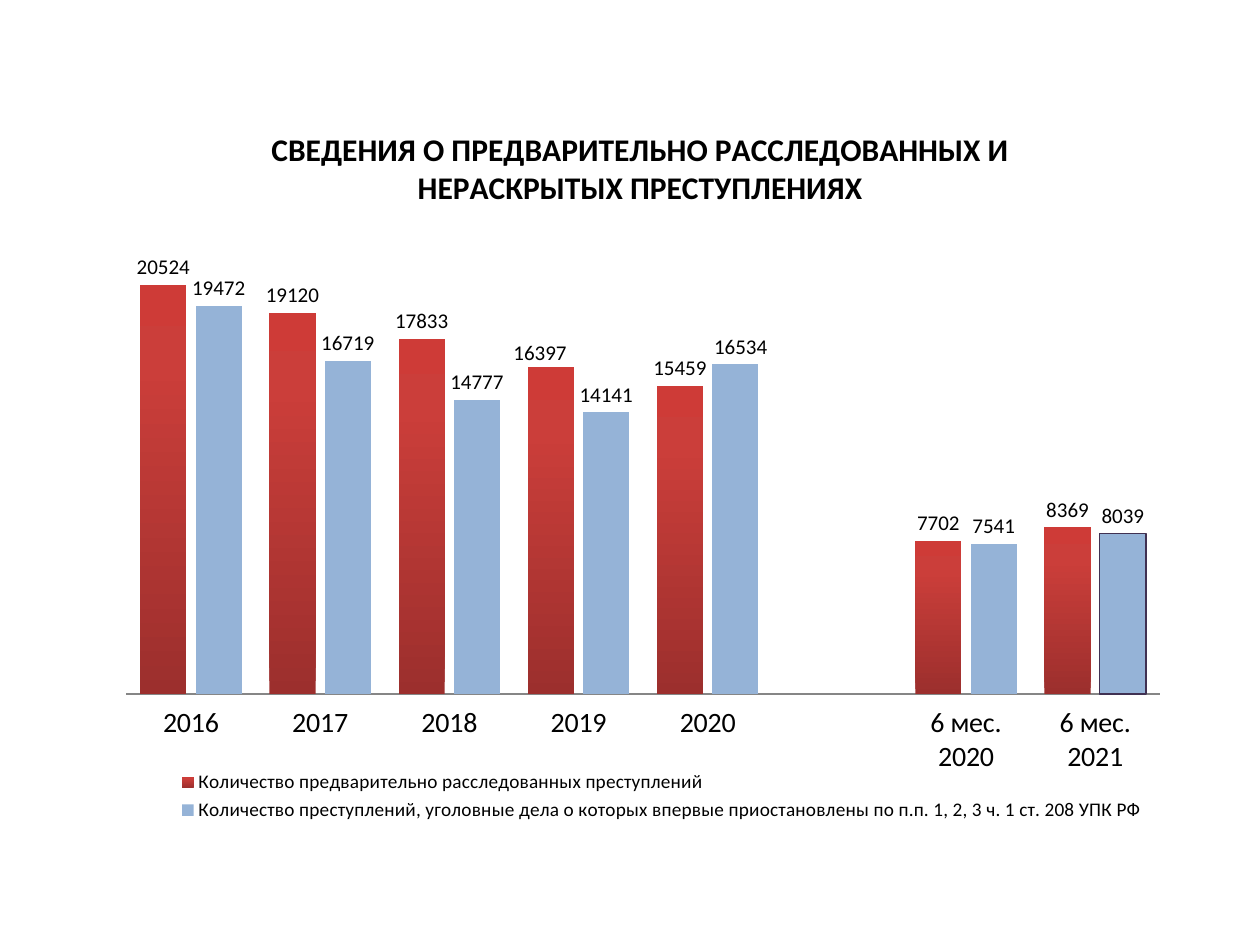
from copy import deepcopy
from dataclasses import dataclass

from lxml.etree import SubElement
from pptx import Presentation
from pptx.chart.data import CategoryChartData as Data
from pptx.dml.color import RGBColor as RGB
from pptx.enum.chart import XL_CHART_TYPE as Kind
from pptx.enum.chart import XL_LABEL_POSITION as Spot
from pptx.enum.chart import XL_LEGEND_POSITION as Side
from pptx.enum.chart import XL_TICK_LABEL_POSITION as Tick
from pptx.enum.chart import XL_TICK_MARK as Mark
from pptx.oxml.ns import qn
from pptx.util import Emu, Pt

SCALE = 914400 / 126


def px(n):
    return Emu(round(n * SCALE))


@dataclass(frozen=True)
class Theme:
    font: str = "Calibri"
    ink: str = "000000"
    axis: str = "868686"
    blue: str = "95B3D7"
    edge: str = "403152"
    reds: tuple = ((0, "9C2F2D"), (0.8, "CB3E3A"), (1, "CE3B37"))
    head: int = 18
    tick: int = 16
    label: int = 12
    key: int = 11


class Deck:
    def __init__(self, theme, width, height):
        self.theme = theme
        self.prs = Presentation()
        self.prs.slide_width, self.prs.slide_height = px(width), px(height)
        self.slide = self.prs.slides.add_slide(self.prs.slide_layouts[6])

    def style(self, font, size, bold=False):
        font.name, font.size, font.bold = self.theme.font, Pt(size), bold
        font.color.rgb = RGB.from_string(self.theme.ink)

    def place(self, node, after, **spots):
        for old in node.findall(qn("c:layout")):
            node.remove(old)
        box = SubElement(node, qn("c:layout"))
        node.find(qn(after)).addnext(box)
        box = SubElement(box, qn("c:manualLayout"))
        for name, val in spots.items():
            SubElement(box, qn("c:" + name)).set("val", str(val))

    def columns(self, left, top, width, height, cats, rows):
        data = Data()
        data.categories = cats
        for name, vals in rows:
            data.add_series(name, vals)
        frame = self.slide.shapes.add_chart(
            Kind.COLUMN_CLUSTERED, px(left), px(top), px(width), px(height), data)
        chart = frame.chart
        self.style(chart.font, self.theme.head)
        plot = chart.plots[0]
        plot.vary_by_categories = False
        plot.gap_width, plot.overlap = 60, -20
        area = chart.element.find(".//" + qn("c:plotArea"))
        if area.find(qn("c:layout")) is None:
            area.insert(0, area.makeelement(qn("c:layout")))
        spot = SubElement(area.find(qn("c:layout")), qn("c:manualLayout"))
        for name, val in (("layoutTarget", "inner"), ("xMode", "edge"),
                          ("yMode", "edge"), ("x", 0.02), ("y", 0.134),
                          ("w", 0.964), ("h", 0.669)):
            SubElement(spot, qn("c:" + name)).set("val", str(val))
        return chart

    def title(self, chart, text):
        chart.has_title = True
        head = chart.chart_title
        head.text_frame.text = text
        self.style(head.text_frame.paragraphs[0].runs[0].font, self.theme.head, True)
        head.include_in_layout = False
        self.place(head._element, "c:tx", xMode="edge", yMode="edge",
                   x=0.15, y=0.035)

    def axes(self, chart, top):
        val, cat = chart.value_axis, chart.category_axis
        val.minimum_scale, val.maximum_scale = 0, top
        val.has_major_gridlines = False
        val.visible = False
        cat.major_tick_mark = cat.minor_tick_mark = Mark.NONE
        cat.tick_label_position = Tick.LOW
        cat.format.line.color.rgb = RGB.from_string(self.theme.axis)
        self.style(cat.tick_labels.font, self.theme.tick)

    def legend(self, chart):
        chart.has_legend = True
        key = chart.legend
        key.position, key.include_in_layout = Side.BOTTOM, False
        self.style(key.font, self.theme.key)
        self.place(key._element, "c:legendPos", xMode="edge", yMode="edge",
                   x=0.06, y=0.9, w=0.92, h=0.08)

    def labels(self, series):
        tags = series.data_labels
        tags.show_value = True
        tags.position = Spot.OUTSIDE_END
        self.style(tags.font, self.theme.label)

    def nudge(self, series, idx, x, y):
        tag = series.points[idx].data_label
        self.style(tag.font, self.theme.label)
        tag.position = Spot.OUTSIDE_END
        for node in series._element.iter(qn("c:dLbl")):
            if node.find(qn("c:idx")).get("val") == str(idx):
                self.place(node, "c:idx", x=x, y=y)

    def shade(self, series, stops):
        fill = series.format.fill
        fill.gradient()
        fill.gradient_angle = 90
        group = series._element.find(".//" + qn("a:gsLst"))
        group.append(deepcopy(group[0]))
        for stop, (pos, color) in zip(fill.gradient_stops, stops):
            stop.position = pos
            stop.color.rgb = RGB.from_string(color)
        for node in group:
            for mod in list(node[0]):
                node[0].remove(mod)

    def paint(self, part, color, edge=None):
        part.format.fill.solid()
        part.format.fill.fore_color.rgb = RGB.from_string(color)
        if edge:
            part.format.line.color.rgb = RGB.from_string(edge)
            part.format.line.width = Pt(0.75)


def main():
    theme = Theme()
    deck = Deck(theme, 1260, 945)
    cats = ["2016", "2017", "2018", "2019", "2020", "", "6 мес. 2020", "6 мес. 2021"]
    rows = [
        ("Количество предварительно расследованных преступлений",
         (20524, 19120, 17833, 16397, 15459, None, 7702, 8369)),
        ("Количество преступлений, уголовные дела о которых впервые "
         "приостановлены по п.п. 1, 2, 3 ч. 1 ст. 208 УПК РФ",
         (19472, 16719, 14777, 14141, 16534, None, 7541, 8039)),
    ]
    chart = deck.columns(105, 96, 1072, 745, cats, rows)
    deck.title(chart, "СВЕДЕНИЯ О ПРЕДВАРИТЕЛЬНО РАССЛЕДОВАННЫХ И "
                      "НЕРАСКРЫТЫХ ПРЕСТУПЛЕНИЯХ")
    deck.axes(chart, 25000)
    deck.legend(chart)
    solved, paused = chart.plots[0].series
    deck.shade(solved, theme.reds)
    deck.paint(paused, theme.blue)
    deck.paint(paused.points[7], theme.blue, theme.edge)
    for series in (solved, paused):
        deck.labels(series)
    deck.nudge(solved, 3, -0.01, 0.005)
    deck.nudge(paused, 4, 0.005, 0)
    deck.prs.save("out.pptx")


if __name__ == "__main__":
    main()
